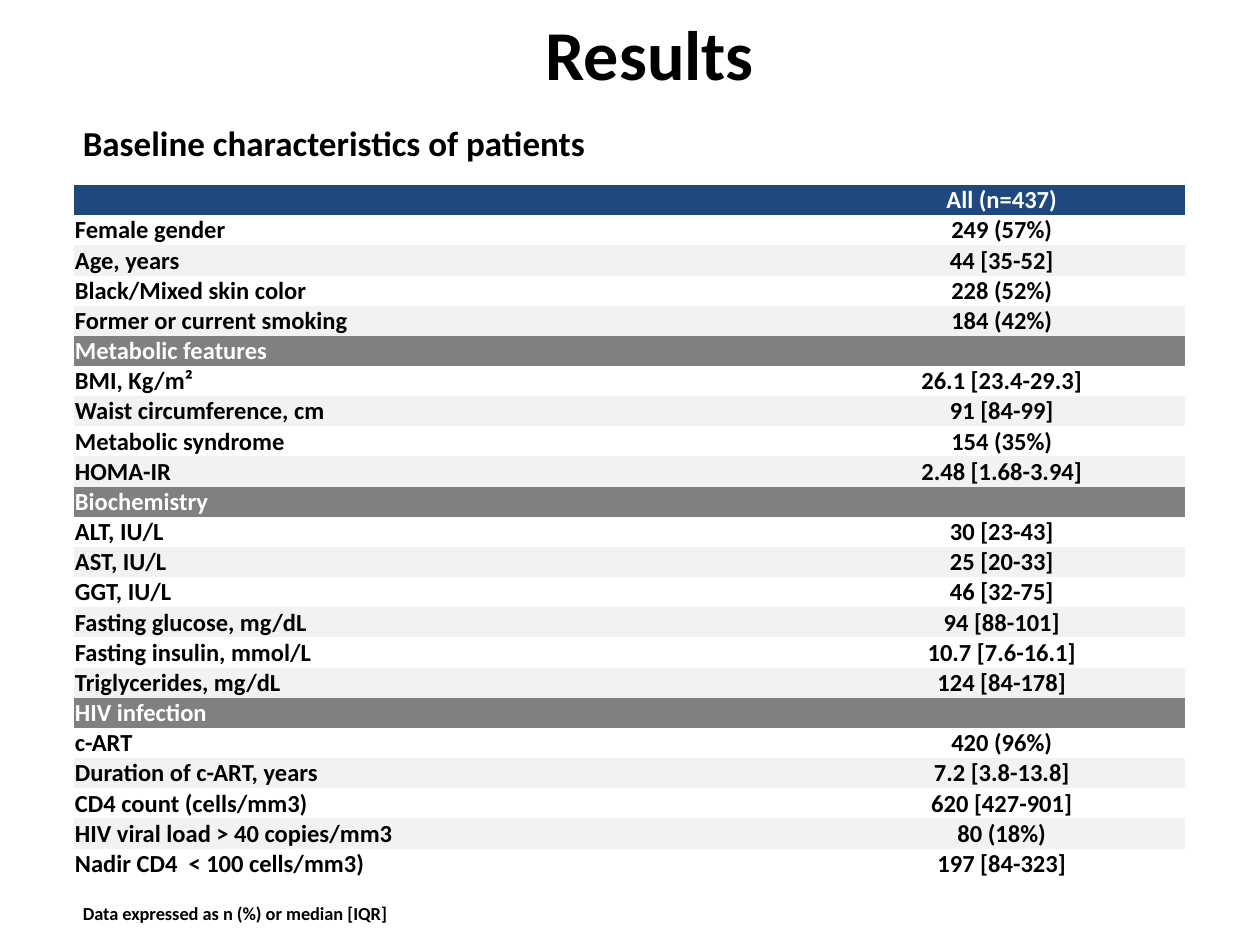
import pptx
import pptx.util
import pptx.dml.color
import pptx.enum.shapes
import pptx.enum.text
from lxml import etree
from pptx.oxml.ns import qn

Cm = pptx.util.Cm
Pt = pptx.util.Pt
ALIGN = pptx.enum.text.PP_ALIGN
ANCHOR = pptx.enum.text.MSO_ANCHOR

HEX = {"black": "000000", "white": "FFFFFF", "navy": "1F497D",
       "gray": "808080", "pale": "F2F2F2"}
FONT = "Calibri"
PLAIN = "{2D5ABB26-0587-4C30-8999-92F81FD0307C}"  # table style without grid

# Each section: heading (if any) and its rows
DATA = [
    (None, [("Female gender", "249 (57%)"),
            ("Age, years", "44 [35-52]"),
            ("Black/Mixed skin color", "228 (52%)"),
            ("Former or current smoking", "184 (42%)")]),
    ("Metabolic features", [("BMI, Kg/m²", "26.1 [23.4-29.3]"),
                            ("Waist circumference, cm", "91 [84-99]"),
                            ("Metabolic syndrome", "154 (35%)"),
                            ("HOMA-IR", "2.48 [1.68-3.94]")]),
    ("Biochemistry", [("ALT, IU/L", "30 [23-43]"),
                      ("AST, IU/L", "25 [20-33]"),
                      ("GGT, IU/L", "46 [32-75]"),
                      ("Fasting glucose, mg/dL", "94 [88-101]"),
                      ("Fasting insulin, mmol/L", "10.7 [7.6-16.1]"),
                      ("Triglycerides, mg/dL", "124 [84-178]")]),
    ("HIV infection", [("c-ART", "420 (96%)"),
                       ("Duration of c-ART, years", "7.2 [3.8-13.8]"),
                       ("CD4 count (cells/mm3)", "620 [427-901]"),
                       ("HIV viral load > 40 copies/mm3", "80 (18%)"),
                       ("Nadir CD4  < 100 cells/mm3)", "197 [84-323]")]),
]


def color(name):
    return pptx.dml.color.RGBColor.from_string(HEX[name])


def style(para, size, ink, align):
    para.alignment = align
    font = para.font
    font.name, font.size, font.bold = FONT, Pt(size), True
    font.color.rgb = color(ink)


def set_text(shape, text, size, align=ALIGN.LEFT, anchor=ANCHOR.TOP):
    frame = shape.text_frame
    frame.word_wrap = True
    frame.vertical_anchor = anchor
    para = frame.paragraphs[0]
    para.text = text
    style(para, size, "black", align)


def add_text(slide, box, *args):
    set_text(slide.shapes.add_textbox(*map(Cm, box)), *args)


def add_note(slide, box, text):
    kind = pptx.enum.shapes.MSO_SHAPE.RECTANGLE
    shape = slide.shapes.add_shape(kind, *map(Cm, box))
    shape.shadow.inherit = False
    shape.fill.solid()
    shape.fill.fore_color.rgb = color("white")
    shape.line.fill.background()
    set_text(shape, text, 10.5)


def set_cell(cell, text, fill, ink, align):
    cell.fill.solid()
    cell.fill.fore_color.rgb = color(fill)
    cell.margin_left = cell.margin_right = Cm(0.02)
    cell.margin_top = Cm(0.01)
    cell.margin_bottom = 0
    cell.vertical_anchor = ANCHOR.BOTTOM
    para = cell.text_frame.paragraphs[0]
    para.text = text
    style(para, 14, ink, align)
    if not text:  # keeps an empty cell as low as its row
        etree.SubElement(para._p, qn("a:endParaRPr"), sz="1400")


def list_rows():
    """Yield label, value, fill and ink for every table row."""
    yield "", "All (n=437)", "navy", "white"
    for head, items in DATA:
        if head:
            yield head, "", "gray", "white"
        for n, (label, value) in enumerate(items):
            yield label, value, ("white", "pale")[n % 2], "black"


def add_grid(slide, box):
    rows = list(list_rows())
    left, top, width, height = box
    table = slide.shapes.add_table(len(rows), 2, *map(Cm, box)).table
    table._tbl.tblPr.find(qn("a:tableStyleId")).text = PLAIN
    table.columns[0].width = Cm(width * 0.67)
    table.columns[1].width = Cm(width * 0.33)
    for r, (label, value, fill, ink) in enumerate(rows):
        table.rows[r].height = Cm(height / len(rows))
        set_cell(table.cell(r, 0), label, fill, ink, ALIGN.LEFT)
        set_cell(table.cell(r, 1), value, fill, ink, ALIGN.CENTER)


def main():
    deck = pptx.Presentation()
    deck.slide_width, deck.slide_height = Cm(25.4), Cm(19.05)
    slide = deck.slides.add_slide(deck.slide_layouts[6])
    # Title
    add_text(slide, (3.9, -0.2, 18.4, 2.5), "Results", 40,
             ALIGN.CENTER, ANCHOR.MIDDLE)
    # Footnote
    add_note(slide, (1.42, 18.06, 7.9, 0.74),
             "Data expressed as n (%) or median [IQR]")
    # Patient table
    add_grid(slide, (1.49, 3.73, 22.4, 14))
    # Subtitle
    add_text(slide, (1.42, 2.33, 22.4, 1),
             "Baseline characteristics of patients", 20)
    deck.save("out.pptx")


if __name__ == "__main__":
    main()
